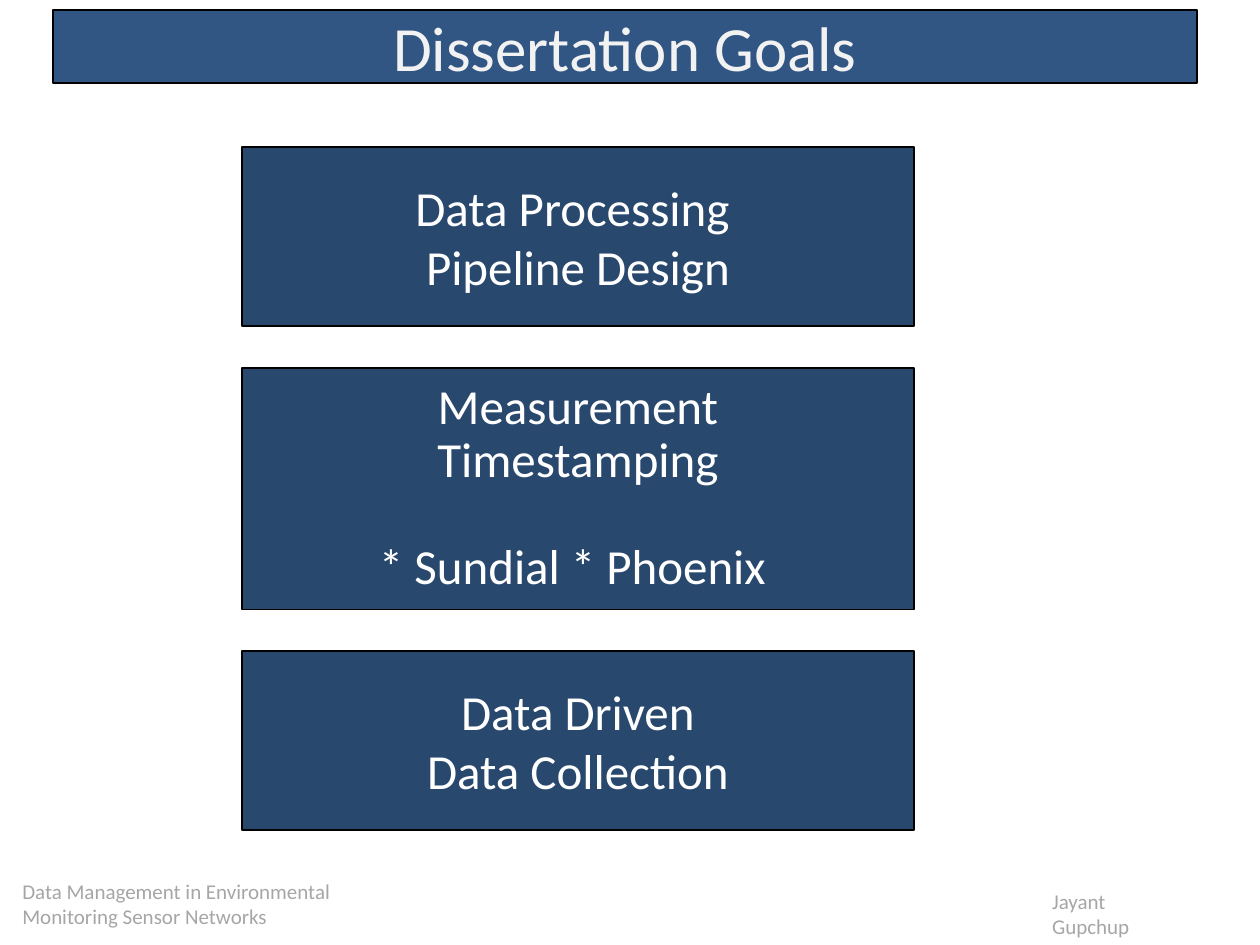
import pptx
import pptx.util
import pptx.dml.color
import pptx.enum.shapes
import pptx.enum.text

Cm = pptx.util.Cm
Pt = pptx.util.Pt
CENTER = pptx.enum.text.PP_ALIGN.CENTER
LEFT = pptx.enum.text.PP_ALIGN.LEFT
MIDDLE = pptx.enum.text.MSO_ANCHOR.MIDDLE


def color(value):
    return pptx.dml.color.RGBColor.from_string(value)


def set_attributes(target, values):
    for name, value in values.items():
        setattr(target, name, value)


def write_lines(shape, lines, size, font_color, paragraph_format):
    text_frame = shape.text_frame
    text_frame.word_wrap = True
    for index, line in enumerate(lines):
        paragraph = text_frame.paragraphs[0] if index == 0 else text_frame.add_paragraph()
        paragraph.text = line
        set_attributes(paragraph, paragraph_format)
        set_attributes(paragraph.font, {"name": "Calibri", "size": Pt(size)})
        paragraph.font.color.rgb = color(font_color)


def add_panel(slide, box, fill, lines, size, font_color, line_spacing=1.0):
    shape = slide.shapes.add_shape(
        pptx.enum.shapes.MSO_SHAPE.RECTANGLE, *map(Cm, box))
    shape.shadow.inherit = False
    shape.fill.solid()
    shape.fill.fore_color.rgb = color(fill)
    shape.line.color.rgb = color("000000")
    shape.line.width = Pt(1)
    set_attributes(shape.text_frame, {
        "vertical_anchor": MIDDLE, "margin_top": 0, "margin_bottom": 0})
    write_lines(shape, lines, size, font_color,
                {"alignment": CENTER, "line_spacing": line_spacing})
    return shape


def add_title(slide, box):
    add_panel(slide, box, "315683", ["Dissertation Goals"], 36, "F2F2F2")


def add_goals(slide, box):
    left, top, width, height = box
    gap = 0.84
    goals = [
        (["Data Processing ", "Pipeline Design"], 3.61, 1.0),
        (["Measurement", "Timestamping", "* Sundial * Phoenix "],
         height - 2 * (3.61 + gap), 0.9),
        (["Data Driven", "Data Collection"], 3.61, 1.0),
    ]
    for lines, goal_height, line_spacing in goals:
        shape = add_panel(slide, (left, top, width, goal_height), "29486D",
                          lines, 28, "FFFFFF", line_spacing)
        if len(lines) > 2:
            shape.text_frame.paragraphs[-1].space_before = Pt(31)
        top += goal_height + gap


def add_footer(slide, box):
    left, top, width, height = box
    notes = [
        (["Data Management in Environmental", "Monitoring Sensor Networks"],
         (left, top, 8.26, height)),
        (["Jayant Gupchup"], (left + width - 3.1, top + 0.2, 3.1, height)),
    ]
    for lines, note_box in notes:
        text_box = slide.shapes.add_textbox(*map(Cm, note_box))
        write_lines(text_box, lines, 12, "A6A6A6", {"alignment": LEFT})


def main():
    presentation = pptx.Presentation()
    set_attributes(presentation, {
        "slide_width": Cm(25.4), "slide_height": Cm(19.05)})
    slide = presentation.slides.add_slide(presentation.slide_layouts[6])
    add_footer(slide, (0.2, 17.58, 23.86, 1.27))
    add_title(slide, (1.07, 0.2, 23.06, 1.48))
    add_goals(slide, (4.88, 2.97, 13.54, 13.77))
    presentation.save("out.pptx")


if __name__ == "__main__":
    main()
